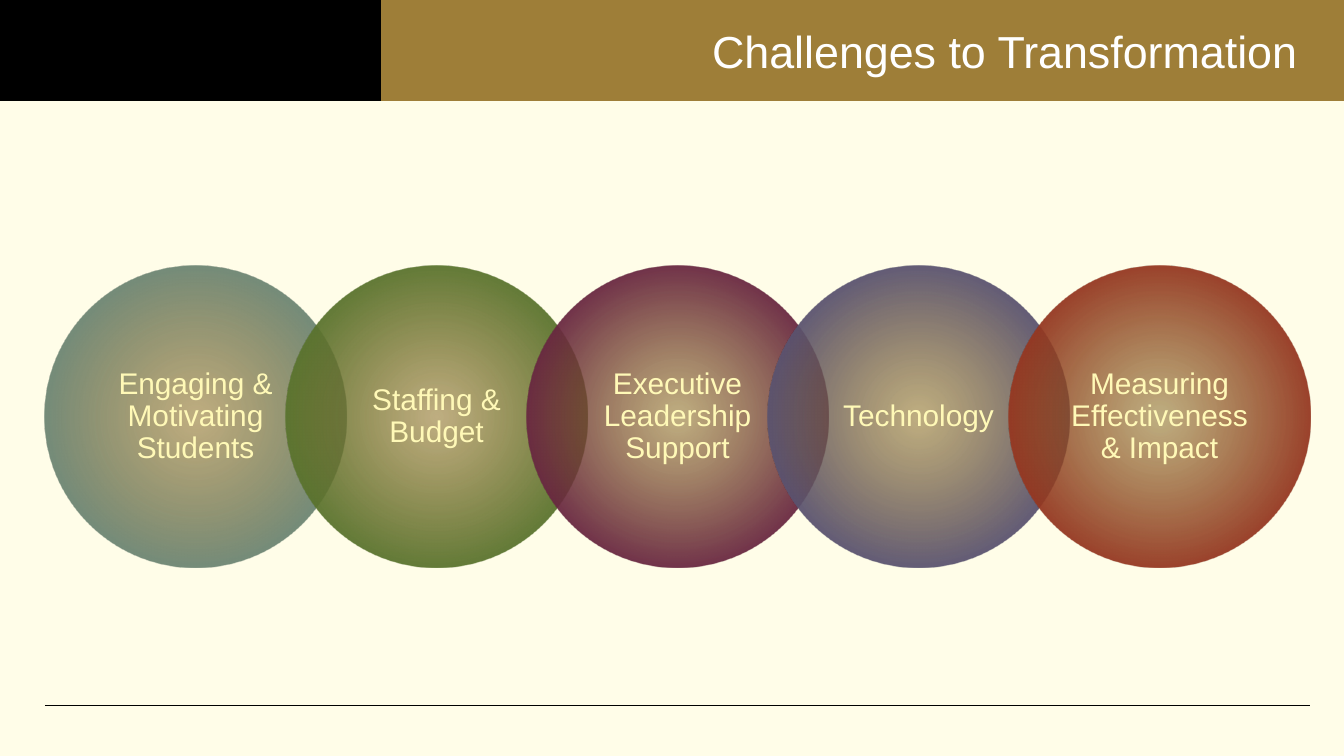
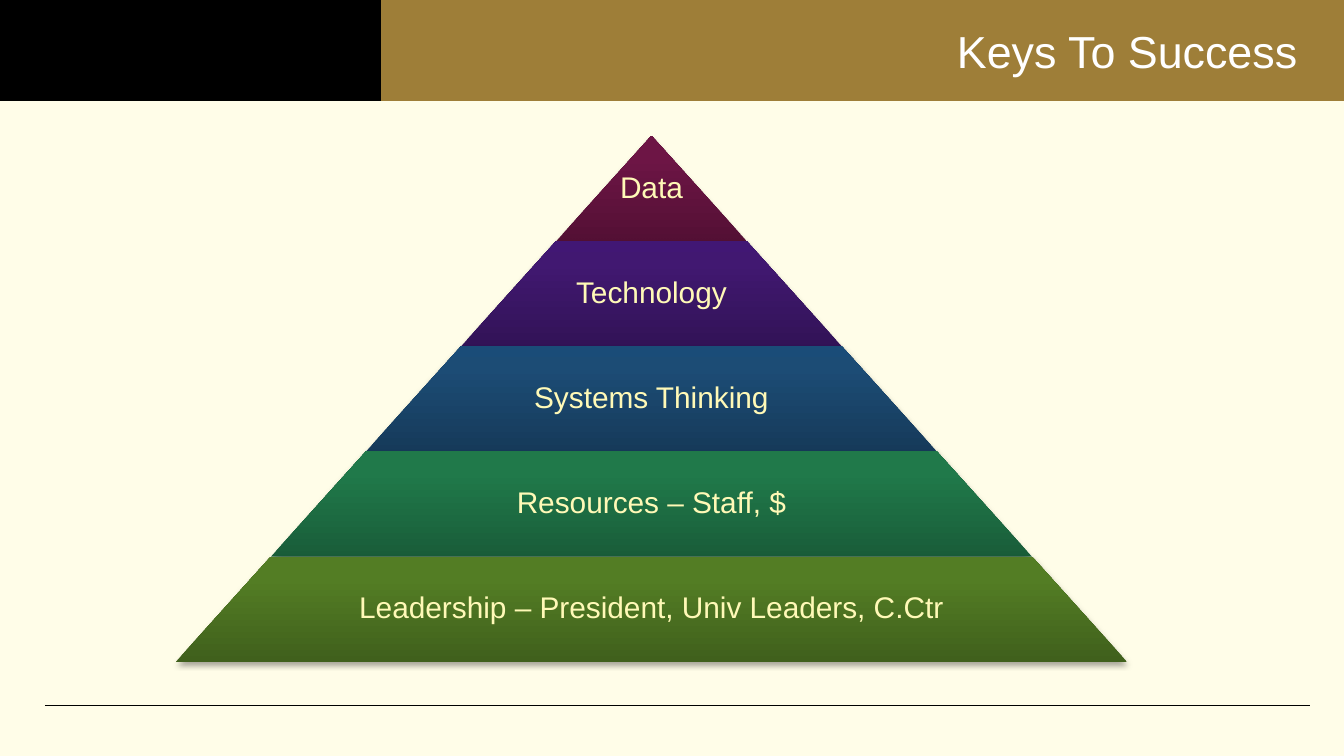
"""Build two slides: a chain of challenges and a pyramid of keys to success."""
from pptx import Presentation
from pptx.util import Pt
from pptx.dml.color import RGBColor as RGB
from pptx.enum.shapes import MSO_SHAPE as Kind, MSO_CONNECTOR as Link
from pptx.enum.text import MSO_ANCHOR as Anchor, PP_ALIGN as Align
from pptx.oxml import parse_xml
from pptx.oxml.ns import qn, nsdecls

HUES = {"page": "FFFDE8", "gold": "9E7E38", "black": "000000", "white": "FFFFFF",
        "cream": "FFF9B7", "core": "81621E", "rim": "AB8125"}
HEAD = {"size": Pt(24), "name": "Arial", "color": "white"}
LABEL = {"size": Pt(16), "name": "Arial", "color": "cream"}


def write(shape, text, form, align, pads):
    frame = shape.text_frame
    frame.word_wrap = True
    frame.vertical_anchor = Anchor.MIDDLE
    across, down = pads
    for side, pad in {"left": across, "right": across, "top": down, "bottom": down}.items():
        setattr(frame, "margin_" + side, Pt(pad))
    para = frame.paragraphs[0]
    para.text = text
    para.alignment = align
    if form is LABEL:
        para.line_spacing = 0.9
    for key, value in form.items():
        if key == "color":
            para.font.color.rgb = RGB.from_string(HUES[value])
        else:
            setattr(para.font, key, value)


def shade(shape, stops, course):
    shape.shadow.inherit = False
    shape.line.fill.background()
    shape.fill.background()
    marks = "".join(
        f'<a:gs pos="{pos * 1000}"><a:srgbClr val="{hue}">'
        f'<a:alpha val="{alpha * 1000}"/></a:srgbClr></a:gs>'
        for pos, hue, alpha in stops)
    props = shape._element.spPr
    props.replace(props.find(qn("a:noFill")), parse_xml(
        f'<a:gradFill {nsdecls("a")} rotWithShape="1"><a:gsLst>{marks}</a:gsLst>'
        f'{course}</a:gradFill>'))


deck = Presentation()
deck.slide_width, deck.slide_height = Pt(720), Pt(405)

slides = []
for title in ("Challenges to Transformation", "Keys To Success"):
    slide = deck.slides.add_slide(deck.slide_layouts[6])
    slide.background.fill.solid()
    slide.background.fill.fore_color.rgb = RGB.from_string(HUES["page"])
    for hue, width in (("gold", 720), ("black", 204)):
        band = slide.shapes.add_shape(Kind.RECTANGLE, 0, 0, Pt(width), Pt(54))
        band.shadow.inherit = False
        band.fill.solid()
        band.line.width = Pt(0.75)
        for paint in (band.fill.fore_color, band.line.color):
            paint.rgb = RGB.from_string(HUES[hue])
    rule = slide.shapes.add_connector(Link.STRAIGHT, Pt(24), Pt(378), Pt(702), Pt(378))
    rule.line.width = Pt(0.75)
    rule.line.color.rgb = RGB.from_string(HUES["black"])
    rule._element.spPr.append(parse_xml(f'<a:effectLst {nsdecls("a")}/>'))
    box = slide.shapes.add_textbox(Pt(216), 0, Pt(486), Pt(54))
    write(box, title, HEAD, Align.RIGHT, (7.2, 3.6))
    slides.append(slide)

chain, keys = slides

RADIAL = ('<a:path path="circle"><a:fillToRect l="50000" t="50000" '
          'r="50000" b="50000"/></a:path>')
rings = [("Engaging & Motivating Students", "6A8A7F"),
         ("Staffing & Budget", "557630"),
         ("Executive Leadership Support", "662046"),
         ("Technology", "55517B"),
         ("Measuring Effectiveness & Impact", "983222")]
for i, (text, hue) in enumerate(rings):
    ring = chain.shapes.add_shape(
        Kind.OVAL, Pt(23.9 + 129.1 * i), Pt(142.5), Pt(161.8), Pt(161.8))
    shade(ring, [(0, HUES["core"], 50), (80, hue, 100), (100, HUES["rim"], 50)], RADIAL)
    write(ring, text, LABEL, Align.CENTER, (8.5, 1.5))

UPWARD = '<a:lin ang="16200000" scaled="0"/>'
tiers = [("Data", "541035", "6D1545", "6F1345"),
         ("Technology", "321357", "411871", "411774"),
         ("Systems Thinking", "163A5A", "1C4C75", "1A4C78"),
         ("Resources – Staff, $", "195D39", "20794A", "1F7B4A"),
         ("Leadership – President, Univ Leaders, C.Ctr", "40601C", "537D24", "537F23")]
mid, unit, tall = 349, 101.9, 56.35
pile = keys.shapes.add_group_shape().shapes
for i, (text, *hues) in enumerate(tiers):
    top, width = 72.8 + tall * i, unit * (i + 1)
    tier = pile.add_shape(
        Kind.TRAPEZOID, Pt(mid - width / 2), Pt(top), Pt(width), Pt(tall))
    tier.adjustments[0] = 0.903
    shade(tier, [(pos, hue, 100) for pos, hue in zip((0, 80, 100), hues)], UPWARD)
    tier._element.spPr.find(qn("a:effectLst")).append(parse_xml(
        f'<a:outerShdw {nsdecls("a")} blurRad="{Pt(3.1)}" dist="{Pt(1.8)}" dir="5400000" '
        f'rotWithShape="0"><a:srgbClr val="{HUES["black"]}"><a:alpha val="35000"/>'
        '</a:srgbClr></a:outerShdw>'))
    room = max(unit, 0.65 * width)
    note = pile.add_textbox(Pt(mid - room / 2), Pt(top), Pt(room), Pt(tall))
    write(note, text, LABEL, Align.CENTER, (1.5, 1.5))

deck.save("out.pptx")
